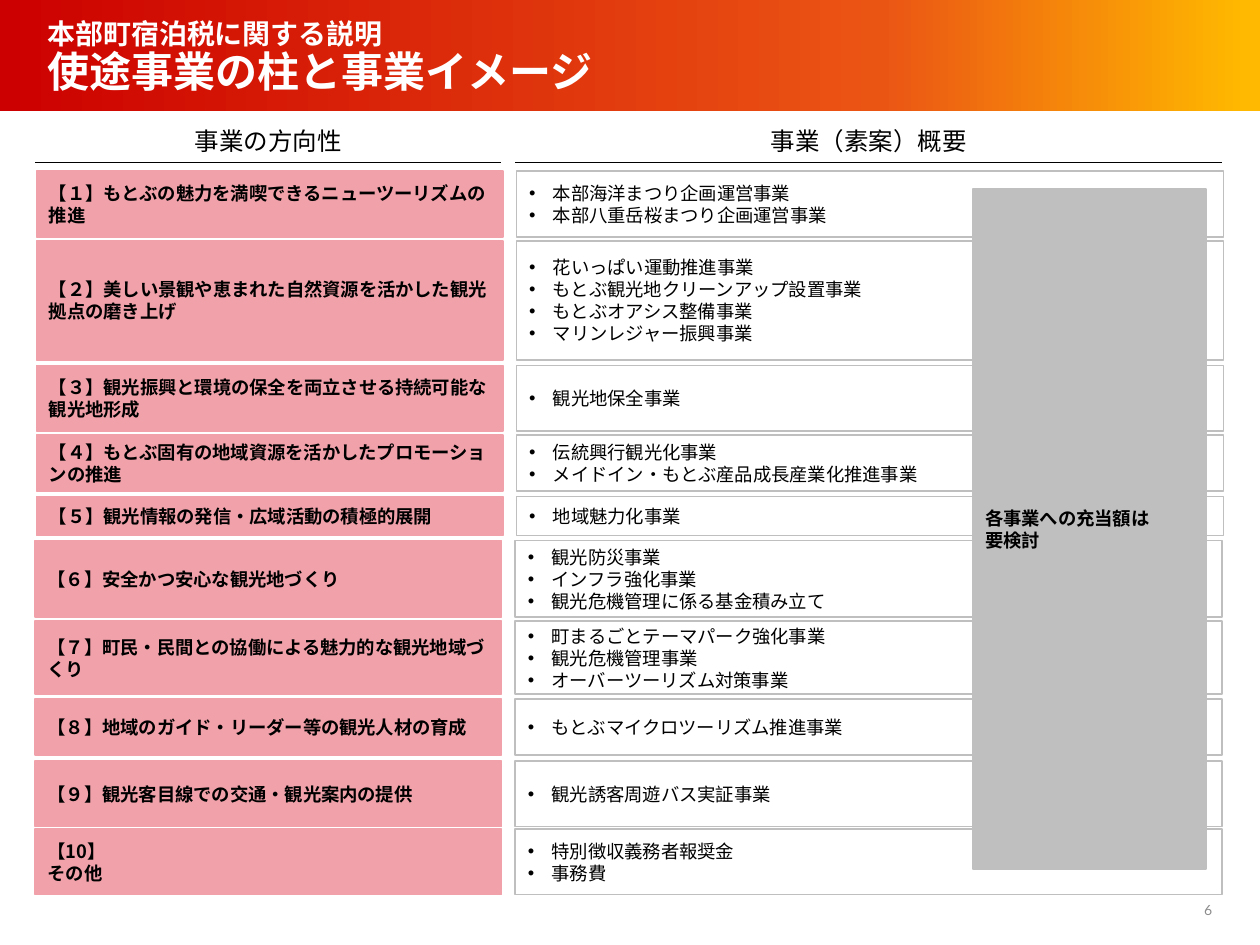
from copy import deepcopy
from lxml import etree
from pptx import Presentation
from pptx.dml.color import RGBColor
from pptx.enum.shapes import MSO_CONNECTOR, MSO_SHAPE
from pptx.enum.text import MSO_ANCHOR, PP_ALIGN
from pptx.oxml.ns import qn
from pptx.util import Inches, Pt

RECT = MSO_SHAPE.RECTANGLE
STRAIGHT = MSO_CONNECTOR.STRAIGHT
LEFT, CENTER, RIGHT = PP_ALIGN.LEFT, PP_ALIGN.CENTER, PP_ALIGN.RIGHT
TOP, MIDDLE = MSO_ANCHOR.TOP, MSO_ANCHOR.MIDDLE

JAPANESE = "Noto Sans CJK JP"
BLACK, WHITE, PINK, GRAY = "000000", "FFFFFF", "F1A1AA", "BFBFBF"
BANNER_STOPS = [(0, "CC0000"), (0.7, "EB5514"), (0.99, "FFB900")]

TITLE = "本部町宿泊税に関する説明\v使途事業の柱と事業イメージ"
TITLE_SIZES = [16, 24]
HEADINGS = [("事業の方向性", 0.28, 3.7), ("事業（素案）概要", 4.09, 5.61)]
NOTE = ["各事業への充当額は", "要検討"]
PILLARS = [
    (1.36, 0.52, ["【１】もとぶの魅力を満喫できるニューツーリズムの推進"],
     ["本部海洋まつり企画運営事業", "本部八重岳桜まつり企画運営事業"]),
    (1.91, 0.95, ["【２】美しい景観や恵まれた自然資源を活かした観光拠点の磨き上げ"],
     ["花いっぱい運動推進事業", "もとぶ観光地クリーンアップ設置事業",
      "もとぶオアシス整備事業", "マリンレジャー振興事業"]),
    (2.9, 0.52, ["【３】観光振興と環境の保全を両立させる持続可能な観光地形成"],
     ["観光地保全事業"]),
    (3.45, 0.45, ["【４】もとぶ固有の地域資源を活かしたプロモーションの推進"],
     ["伝統興行観光化事業", "メイドイン・もとぶ産品成長産業化推進事業"]),
    (3.94, 0.31, ["【５】観光情報の発信・広域活動の積極的展開"],
     ["地域魅力化事業"]),
    (4.29, 0.61, ["【６】安全かつ安心な観光地づくり"],
     ["観光防災事業", "インフラ強化事業", "観光危機管理に係る基金積み立て"]),
    (4.93, 0.58, ["【７】町民・民間との協働による魅力的な観光地域づくり"],
     ["町まるごとテーマパーク強化事業", "観光危機管理事業", "オーバーツーリズム対策事業"]),
    (5.55, 0.44, ["【８】地域のガイド・リーダー等の観光人材の育成"],
     ["もとぶマイクロツーリズム推進事業"]),
    (6.04, 0.52, ["【９】観光客目線での交通・観光案内の提供"],
     ["観光誘客周遊バス実証事業"]),
    (6.58, 0.52, ["【10】", "その他"],
     ["特別徴収義務者報奨金", "事務費"]),
]
UPPER_ROWS, UPPER_SHIFT = 5, 0.01


def rgb(value):
    return RGBColor.from_string(value)


def add_bullet(paragraph):
    properties = paragraph._p.get_or_add_pPr()
    properties.set("marL", str(Inches(0.19)))
    properties.set("indent", str(-Inches(0.19)))
    etree.SubElement(properties, qn("a:buFont"), typeface="Arial")
    etree.SubElement(properties, qn("a:buChar"), char="•")


def write(shape, lines, size, color=BLACK, bold=False, align=LEFT,
          anchor=MIDDLE, font=JAPANESE, bullets=False):
    frame = shape.text_frame
    frame.word_wrap = True
    frame.vertical_anchor = anchor
    frame.text = "\n".join(lines)
    for paragraph in frame.paragraphs:
        paragraph.alignment = align
        if bullets:
            add_bullet(paragraph)
        for run in paragraph.runs:
            run.font.size = Pt(size)
            run.font.bold = bold
            run.font.color.rgb = rgb(color)
            run.font.name = font
            etree.SubElement(run._r.get_or_add_rPr(), qn("a:ea"), typeface=font)


def add_text(slide, box, lines, size, **style):
    textbox = slide.shapes.add_textbox(*map(Inches, box))
    write(textbox, lines, size, **style)
    return textbox


def add_box(slide, box, lines, fill, line, **style):
    shape = slide.shapes.add_shape(RECT, *map(Inches, box))
    shape.shadow.inherit = False
    if fill:
        shape.fill.solid()
        shape.fill.fore_color.rgb = rgb(fill)
    else:
        shape.fill.background()
    shape.line.color.rgb = rgb(line)
    shape.line.width = Pt(1)
    write(shape, lines, 10.5, **style)


def add_banner(slide):
    banner = slide.shapes.add_shape(RECT, 0, 0, Inches(10), Inches(0.88))
    banner.shadow.inherit = False
    banner.line.fill.background()
    banner.fill.gradient()
    banner.fill.gradient_angle = 0
    stop_list = banner._element.spPr.find(".//" + qn("a:gsLst"))
    stop_list.append(deepcopy(stop_list[0]))
    for stop, (position, color) in zip(banner.fill.gradient_stops, BANNER_STOPS):
        stop.position = position
        stop.color.rgb = rgb(color)


def add_title(slide):
    title = add_text(slide, (0.28, 0.12, 8.27, 0.69), [TITLE], 16, color=WHITE, bold=True)
    title.text_frame.margin_top = title.text_frame.margin_bottom = Inches(0.04)
    paragraph = title.text_frame.paragraphs[0]
    paragraph.line_spacing = 0.9
    for run, size in zip(paragraph.runs, TITLE_SIZES):
        run.font.size = Pt(size)
    line_break = paragraph._p.find(qn("a:br"))
    etree.SubElement(line_break, qn("a:rPr"), sz=str(TITLE_SIZES[0] * 100))


def add_heading(slide, heading, left, width):
    rule = slide.shapes.add_connector(
        STRAIGHT, Inches(left), Inches(1.29), Inches(left + width), Inches(1.29))
    rule.line.color.rgb = rgb(BLACK)
    rule.line.width = Pt(0.5)
    etree.SubElement(rule._element.spPr, qn("a:effectLst"))
    add_text(slide, (left, 0.95, width, 0.34), [heading], 14, align=CENTER, anchor=TOP)


def main():
    deck = Presentation()
    deck.slide_width, deck.slide_height = Inches(10), Inches(7.5)
    slide = deck.slides.add_slide(deck.slide_layouts[6])
    add_banner(slide)
    add_title(slide)
    add_text(slide, (7.47, 7.12, 2.25, 0.21), ["6"], 8, color="8C8C8C", align=RIGHT, font="Lato")
    for heading in HEADINGS:
        add_heading(slide, *heading)
    (_, pillar_left, pillar_width), (_, project_left, project_width) = HEADINGS
    for row, (top, height, pillar, projects) in enumerate(PILLARS):
        shift = UPPER_SHIFT if row < UPPER_ROWS else 0
        add_box(slide, (project_left + shift, top, project_width, height),
                projects, None, GRAY, bullets=True)
        add_box(slide, (pillar_left + shift, top, pillar_width, height),
                pillar, PINK, PINK, bold=True)
    add_box(slide, (7.72, 1.5, 1.85, 5.4), NOTE, GRAY, GRAY, bold=True)
    deck.save("out.pptx")


if __name__ == "__main__":
    main()
